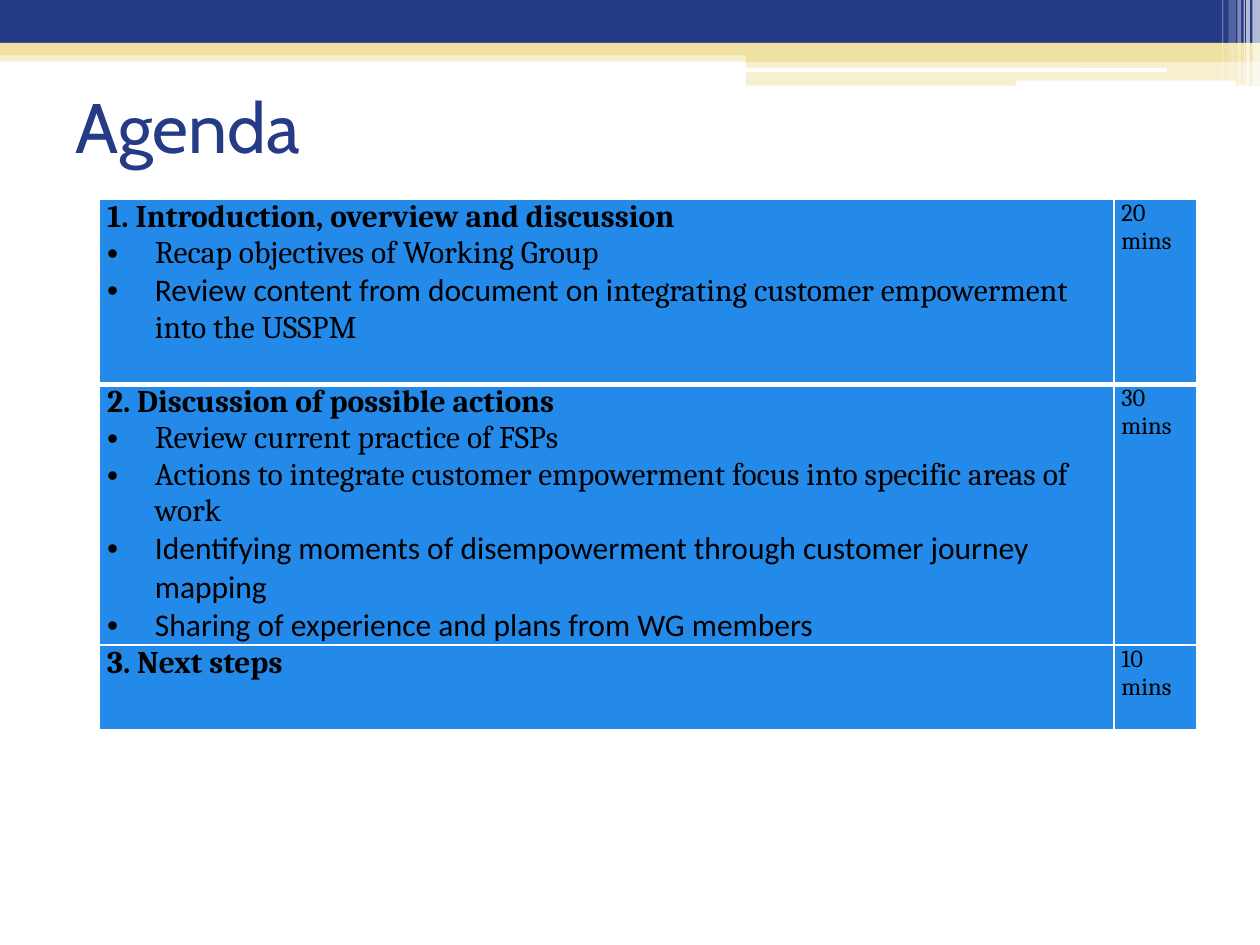
"""Build the agenda slide with a banded header and a timed agenda table."""
from lxml.etree import SubElement
from pptx import Presentation
from pptx.dml.color import RGBColor
from pptx.enum.shapes import MSO_SHAPE
from pptx.enum.text import MSO_ANCHOR, PP_ALIGN
from pptx.oxml import parse_xml
from pptx.oxml.ns import nsdecls, qn
from pptx.util import Inches, Pt

NAVY, SAND, WHITE, BLUE, BLACK = "263B86", "EFE1A2", "FFFFFF", "248AEA", "000000"
RECT, ROUND = MSO_SHAPE.RECTANGLE, MSO_SHAPE.ROUNDED_RECTANGLE


def paint(fill, color, alpha=100):
    """Apply a solid fill with an opacity in percent."""
    fill.solid()
    fill.fore_color.rgb = RGBColor.from_string(color)
    if alpha < 100:
        clr = fill._xPr.find(qn("a:solidFill"))[0]
        SubElement(clr, qn("a:alpha")).set("val", str(alpha * 1000))


def add_run(p, text, size, font, color, bold=False):
    """Append one formatted run to a paragraph."""
    r = p.add_run()
    r.text = text
    r.font.size, r.font.name, r.font.bold = Pt(size), font, bold
    r.font.color.rgb = RGBColor.from_string(color)


prs = Presentation()
prs.slide_width, prs.slide_height = Inches(10), Inches(7.5)
s = prs.slides.add_slide(prs.slide_layouts[5])

bands = [
    (RECT, 0, 0.4, 10, 0.09, SAND, 50),
    (RECT, 0, 0, 10, 0.34, NAVY, 100),
    (RECT, 0, 0.34, 10, 0.1, SAND, 100),
    (RECT, 5.92, 0.39, 4.08, 0.1, SAND, 100),
    (RECT, 5.92, 0.48, 4.08, 0.2, SAND, 50),
    (ROUND, 5.91, 0.54, 3.35, 0.03, WHITE, 100),
    (ROUND, 8.06, 0.64, 1.75, 0.04, WHITE, 100),
    (RECT, 9.94, 0, 0.06, 0.68, WHITE, 65),
    (RECT, 9.89, 0, 0.03, 0.68, WHITE, 65),
    (RECT, 9.87, 0, 0.01, 0.68, WHITE, 60),
    (RECT, 9.82, 0, 0.03, 0.68, WHITE, 40),
    (RECT, 9.75, 0, 0.06, 0.64, WHITE, 20),
    (RECT, 9.7, 0, 0.01, 0.64, WHITE, 30),
]
for kind, x, y, w, h, color, alpha in bands:
    sp = s.shapes.add_shape(kind, Inches(x), Inches(y), Inches(w), Inches(h))
    sp.shadow.inherit = False
    sp.line.fill.background()
    paint(sp.fill, color, alpha)

title = s.shapes.title
title.left, title.top, title.width, title.height = (Inches(v) for v in (0.5, 0.41, 9, 1.17))
s.shapes._spTree.append(title._element)
tf = title.text_frame
tf.vertical_anchor = MSO_ANCHOR.MIDDLE
p = tf.paragraphs[0]
p.alignment = PP_ALIGN.LEFT
add_run(p, "Agenda", 40, "Cabin", NAVY)

agenda = [
    (1.47, "20 mins", "1. Introduction, overview and discussion", [
        [("Recap objectives of Working Group", "Cambria")],
        [("Review content from document on i", "Calibri"),
         ("ntegrating customer empowerment into the USSPM", "Cambria")],
    ]),
    (2.07, "30 mins", "2. Discussion of possible actions", [
        [("Review current practice of FSPs", "Cambria")],
        [("Actions to integrate customer empowerment focus into specific areas of work", "Cambria")],
        [("Identifying moments of disempowerment through customer journey mapping", "Calibri")],
        [("Sharing of experience and plans from WG members", "Calibri")],
    ]),
    (0.67, "10 mins", "3. Next steps", []),
]
table = s.shapes.add_table(len(agenda), 2, Inches(0.79), Inches(1.58), Inches(8.71), Inches(4.21)).table
table.first_row = table.horz_banding = False
for col, width in zip(table.columns, (8.05, 0.66)):
    col.width = Inches(width)

for i, (height, minutes, heading, items) in enumerate(agenda):
    table.rows[i].height = Inches(height)
    topic, time = table.rows[i].cells
    add_run(topic.text_frame.paragraphs[0], heading, 18, "Cambria", BLACK, True)
    add_run(time.text_frame.paragraphs[0], minutes, 14, "Cambria", BLACK)
    for item in items:
        p = topic.text_frame.add_paragraph()
        pPr = p._p.get_or_add_pPr()
        pPr.set("marL", str(Inches(0.38)))
        pPr.set("indent", str(Inches(-0.38)))
        SubElement(pPr, qn("a:buFont")).set("typeface", "Arial")
        SubElement(pPr, qn("a:buChar")).set("char", "•")
        for text, font in item:
            add_run(p, text, 18, font, BLACK)
    for cell in (topic, time):
        cell.margin_left = cell.margin_right = Inches(0.06)
        cell.margin_top = cell.margin_bottom = 0
        paint(cell.fill, BLUE)
        widths = {"L": 1, "R": 1, "T": 3 if i == 1 else 1, "B": 3 if i == 0 else 1}
        for n, (side, width) in enumerate(widths.items()):
            cell._tc.tcPr.insert(n, parse_xml(
                f'<a:ln{side} {nsdecls("a")} w="{Pt(width)}"><a:solidFill>'
                f'<a:srgbClr val="{WHITE}"/></a:solidFill></a:ln{side}>'))

prs.save("out.pptx")
